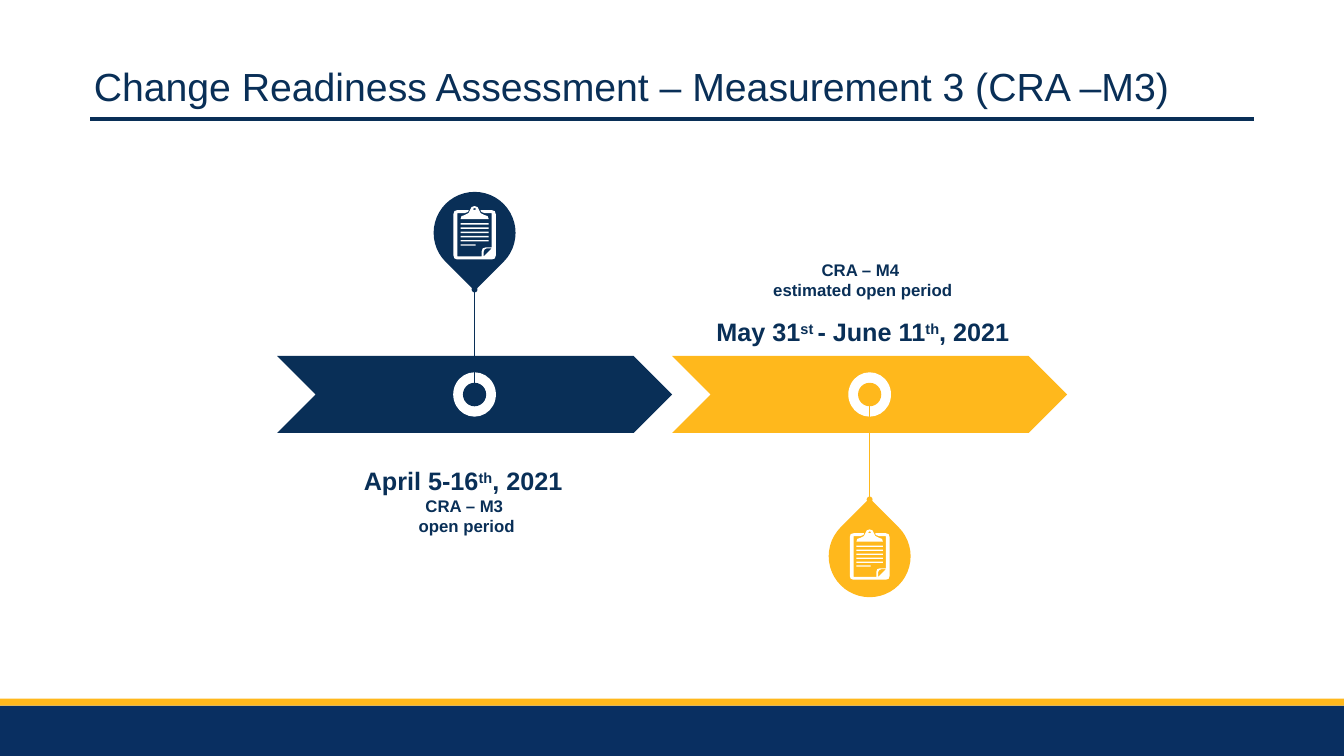
"""Build the Change Readiness Assessment timeline slide."""
from dataclasses import dataclass

import pptx
import pptx.dml.color
import pptx.enum.shapes
import pptx.enum.text
import pptx.oxml
import pptx.oxml.ns
import pptx.shapes.autoshape
import pptx.slide
import pptx.text.text
import pptx.util

Pt = pptx.util.Pt
RGB = pptx.dml.color.RGBColor
SHAPE = pptx.enum.shapes.MSO_SHAPE
ALIGN = pptx.enum.text.PP_ALIGN
Point = tuple[int, int]


@dataclass(frozen=True)
class Theme:
    navy: RGB = RGB(0x09, 0x2F, 0x57)
    footer: RGB = RGB(0x09, 0x2F, 0x61)
    gold: RGB = RGB(0xFF, 0xB8, 0x1C)
    white: RGB = RGB(0xFF, 0xFF, 0xFF)
    font: str = "Arial"
    title_size: float = 28
    date_size: float = 18
    caption_size: float = 12


@dataclass(frozen=True)
class Box:
    left: float
    top: float
    width: float
    height: float


@dataclass(frozen=True)
class Milestone:
    centre: float
    color: RGB
    direction: int
    pin_rotation: float
    icon_scale: float


@dataclass(frozen=True)
class Line:
    wording: tuple[str, ...]
    size: float
    spacing: float = 1.0


@dataclass(frozen=True)
class Label:
    box: Box
    lines: tuple[Line, ...]


THEME = Theme()
SLIDE_WIDTH, SLIDE_HEIGHT = 960, 540
AXIS = 281.8
ARROW_WIDTH, ARROW_HEIGHT = 282.2, 55
PIN_OFFSET, DOT_OFFSET, CORE_RADIUS = 115.5, 75, 8.4
ICON_RISE, ICON_UNIT = 19.1, 0.72

MILESTONES = (
    Milestone(339, THEME.navy, -1, 135, 1.0),
    Milestone(621.2, THEME.gold, 1, 315, 0.94),
)
SUPERSCRIPTS = ("th", "st ")
LABELS = (
    Label(Box(245.5, 318.2, 175.7, 69.1), (
        Line(("April 5-16", "th", ", 2021 "), THEME.date_size, 1.5),
        Line(("CRA – M3 ",), THEME.caption_size),
        Line(("open period",), THEME.caption_size))),
    Label(Box(485.3, 222.5, 262.1, 29.1), (
        Line(("May 31", "st ", "- June 11", "th", ", 2021"), THEME.date_size),)),
    Label(Box(532.8, 182.2, 167, 36), (
        Line(("CRA – M4 ",), THEME.caption_size),
        Line(("estimated open period",), THEME.caption_size))),
)

BOARD: tuple[Point, ...] = (
    (17, 4), (6, 4), (6, 5), (7, 6), (10, 7), (17, 7), (17, 41), (11, 41), (8, 42), (7, 45),
    (7, 50), (-17, 50), (-17, 7), (-10, 7), (-7, 6), (-6, 5), (-6, 4), (-17, 4), (-20, 5),
    (-21, 8), (-21, 49), (-20, 52), (-17, 53), (17, 53), (20, 52), (21, 49), (21, 8), (20, 5))
FOLD: tuple[Point, ...] = ((9, 50), (9, 45), (10, 43), (12, 42), (17, 42))
CLIP: tuple[Point, ...] = (
    (-14, 13), (-13, 10), (-10, 9), (-6, 7), (-4, 3), (-3, 1), (0, 0),
    (3, 1), (4, 3), (6, 7), (10, 9), (13, 10), (14, 13))
CLIP_HOLE: tuple[Point, ...] = ((0, 2), (-2, 3), (0, 4), (2, 3))
RULE_WIDTHS = (28, 28, 28, 28, 28, 15)


def paint(shape: pptx.shapes.autoshape.Shape, color: RGB) -> None:
    """Give a shape a plain fill with no outline or shadow."""
    shape.shadow.inherit = False
    shape.fill.solid()
    shape.fill.fore_color.rgb = color
    shape.line.fill.background()


def add_filled(slide: pptx.slide.Slide, kind: SHAPE, box: Box, color: RGB,
               rotation: float = 0) -> None:
    """Add a preset shape in one colour."""
    shape = slide.shapes.add_shape(
        kind, Pt(box.left), Pt(box.top), Pt(box.width), Pt(box.height))
    shape.rotation = rotation
    paint(shape, color)


def add_centred(slide: pptx.slide.Slide, kind: SHAPE, x: float, y: float, width: float,
                height: float, color: RGB, rotation: float = 0) -> None:
    """Add a preset shape around a centre point."""
    add_filled(slide, kind, Box(x - width / 2, y - height / 2, width, height), color, rotation)


def add_line(slide: pptx.slide.Slide, start: tuple[float, float], end: tuple[float, float],
             color: RGB, width: float) -> None:
    """Add a straight line without a shadow."""
    connector = slide.shapes.add_connector(
        pptx.enum.shapes.MSO_CONNECTOR.STRAIGHT,
        Pt(start[0]), Pt(start[1]), Pt(end[0]), Pt(end[1]))
    connector.line.color.rgb = color
    connector.line.width = Pt(width)
    effects = pptx.oxml.parse_xml(f'<a:effectLst {pptx.oxml.ns.nsdecls("a")}/>')
    connector._element.spPr.append(effects)


def add_outline(slide: pptx.slide.Slide, contours: tuple[tuple[Point, ...], ...],
                x: float, top: float, unit: float) -> None:
    """Add a white outline whose later contours are holes."""
    builder = slide.shapes.build_freeform(*contours[0][0], scale=float(Pt(unit)))
    builder.add_line_segments(contours[0][1:])
    for hole in contours[1:]:
        builder.move_to(*hole[0])
        builder.add_line_segments(hole[1:])
    paint(builder.convert_to_shape(Pt(x), Pt(top)), THEME.white)


def add_clipboard(slide: pptx.slide.Slide, x: float, top: float, scale: float) -> None:
    """Draw the clipboard icon below a top centre point."""
    unit = ICON_UNIT * scale
    add_outline(slide, (BOARD, FOLD), x, top, unit)
    add_outline(slide, (CLIP, CLIP_HOLE), x, top, unit)
    for row, width in enumerate(RULE_WIDTHS):
        rule = Box(x - 14 * unit, top + (17 + 4.2 * row) * unit, width * unit, 1.4 * unit)
        add_filled(slide, SHAPE.RECTANGLE, rule, THEME.white)


def add_milestone(slide: pptx.slide.Slide, milestone: Milestone) -> None:
    """Draw an arrow with its ring, stem, pin and icon."""
    x, color, way = milestone.centre, milestone.color, milestone.direction
    pin_y, dot_y = AXIS + way * PIN_OFFSET, AXIS + way * DOT_OFFSET
    add_centred(slide, SHAPE.CHEVRON, x, AXIS, ARROW_WIDTH, ARROW_HEIGHT, color)
    add_centred(slide, SHAPE.OVAL, x, AXIS, 30.5, 31.7, THEME.white)
    add_centred(slide, SHAPE.OVAL, x, AXIS, 16.6, 2 * CORE_RADIUS, color)
    add_centred(slide, SHAPE.TEAR, x, pin_y, 58.5, 58.5, color, milestone.pin_rotation)
    add_line(slide, (x, AXIS + way * CORE_RADIUS), (x, dot_y), color, 1)
    add_centred(slide, SHAPE.OVAL, x, dot_y, 4.2, 4.2, color)
    add_clipboard(slide, x, pin_y - ICON_RISE, milestone.icon_scale)


def style(paragraph: pptx.text.text._Paragraph, size: float, bold: bool) -> None:
    """Set the paragraph's shared font."""
    paragraph.font.name = THEME.font
    paragraph.font.size = Pt(size)
    paragraph.font.bold = bold
    paragraph.font.color.rgb = THEME.navy


def add_label(slide: pptx.slide.Slide, label: Label) -> None:
    """Add a centred bold label with raised ordinals."""
    box = label.box
    frame = slide.shapes.add_textbox(
        Pt(box.left), Pt(box.top), Pt(box.width), Pt(box.height)).text_frame
    frame.word_wrap = True
    for index, line in enumerate(label.lines):
        paragraph = frame.add_paragraph() if index else frame.paragraphs[0]
        paragraph.alignment = ALIGN.CENTER
        paragraph.line_spacing = line.spacing
        style(paragraph, line.size, True)
        for words in line.wording:
            run = paragraph.add_run()
            run.text = words
            if words in SUPERSCRIPTS:
                run._r.get_or_add_rPr().set("baseline", "30000")


def add_title(slide: pptx.slide.Slide, text: str) -> None:
    """Place and format the title placeholder."""
    title = slide.shapes.title
    title.left, title.top, title.width, title.height = Pt(59.8), Pt(41), Pt(900), Pt(41)
    title.text_frame.text = text
    title.text_frame.auto_size = pptx.enum.text.MSO_AUTO_SIZE.NONE
    title.text_frame.vertical_anchor = pptx.enum.text.MSO_ANCHOR.BOTTOM
    heading = title.text_frame.paragraphs[0]
    heading.alignment = ALIGN.LEFT
    style(heading, THEME.title_size, False)


def main() -> None:
    """Build and save the presentation."""
    deck = pptx.Presentation()
    deck.slide_width, deck.slide_height = Pt(SLIDE_WIDTH), Pt(SLIDE_HEIGHT)
    slide = deck.slides.add_slide(deck.slide_layouts.get_by_name("Title Only"))
    add_filled(slide, SHAPE.RECTANGLE, Box(0, 504, SLIDE_WIDTH, 36), THEME.footer)
    add_filled(slide, SHAPE.RECTANGLE, Box(0, 499, SLIDE_WIDTH, 5), THEME.gold)
    add_line(slide, (64.3, 85), (895.7, 85), THEME.navy, 2.25)
    add_title(slide, "Change Readiness Assessment – Measurement 3 (CRA –M3)")
    for milestone in MILESTONES:
        add_milestone(slide, milestone)
    for label in LABELS:
        add_label(slide, label)
    deck.save("out.pptx")


if __name__ == "__main__":
    main()
